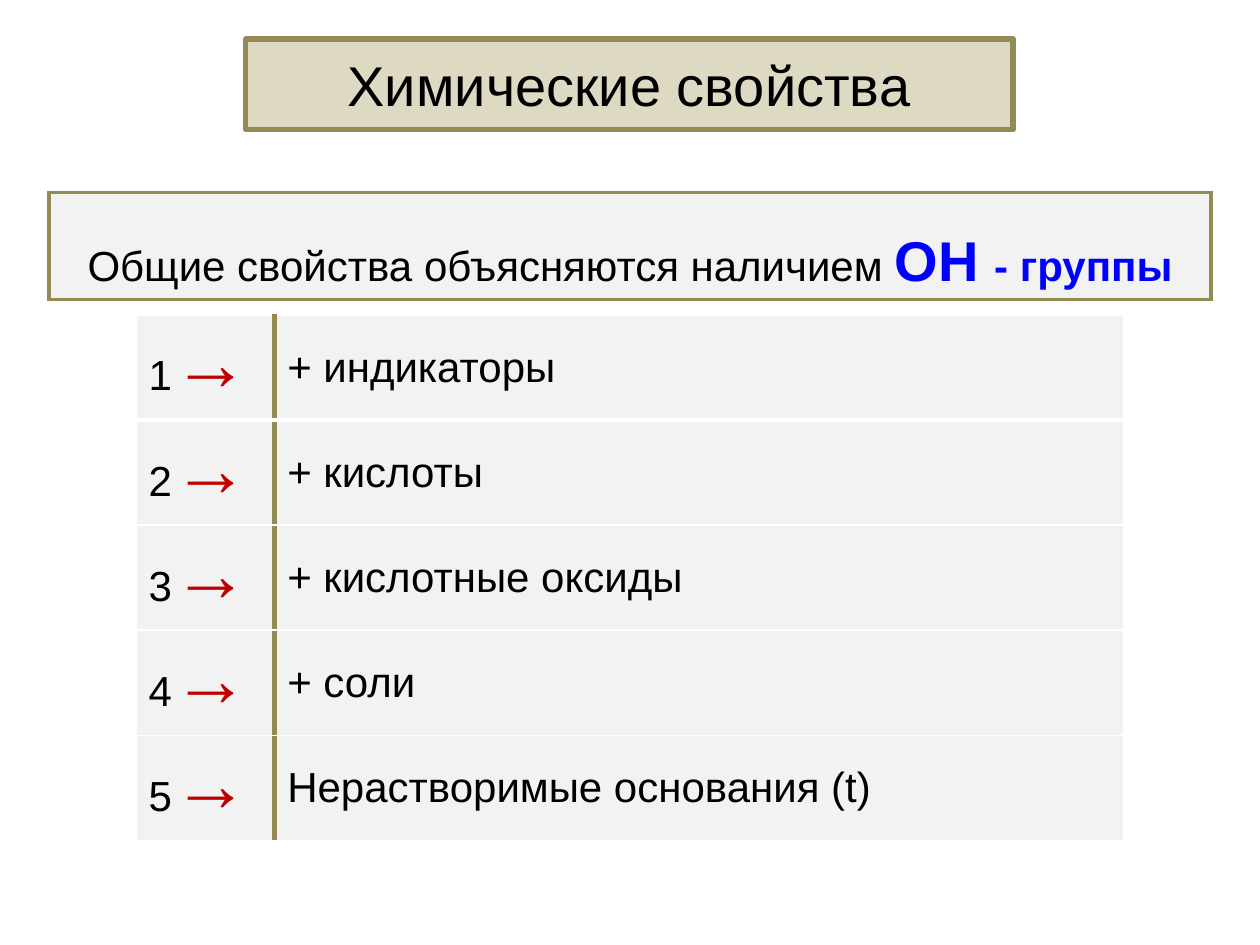
"""Build a slide on the chemical properties explained by the OH group."""
from dataclasses import dataclass

from lxml.etree import SubElement
from pptx import Presentation
from pptx.dml.color import RGBColor
from pptx.enum.shapes import MSO_SHAPE as Preset
from pptx.enum.text import MSO_ANCHOR as Anchor, PP_ALIGN as Align
from pptx.oxml.ns import qn
from pptx.util import Inches, Pt

COLORS = {"sand": "DDD9C3", "olive": "948A54", "pale": "F2F2F2", "white": "FFFFFF",
          "ink": "000000", "blue": "0000FF", "red": "C00000"}
SLIDE_WIDTH, SLIDE_HEIGHT = Inches(10), Inches(7.5)
GRID_COLUMNS, GRID_ROWS = 100, 75
TABLE_FORMAT = {"first_row": False, "horz_banding": False}
REACTIONS = ["+ индикаторы", "+ кислоты", "+ кислотные оксиды", "+ соли",
             "Нерастворимые основания (t)"]


@dataclass(frozen=True)
class Box:
    left: float
    top: float
    width: float
    height: float

    def lengths(self) -> tuple:
        return (columns(self.left), rows(self.top), columns(self.width), rows(self.height))


@dataclass(frozen=True)
class Phrase:
    text: str
    size: int = 24
    color: str = "ink"
    bold: bool = False


@dataclass(frozen=True)
class Edge:
    color: str
    points: float


def columns(count: float) -> int:
    return round(SLIDE_WIDTH * count / GRID_COLUMNS)


def rows(count: float) -> int:
    return round(SLIDE_HEIGHT * count / GRID_ROWS)


def rgb(name: str) -> RGBColor:
    return RGBColor.from_string(COLORS[name])


def apply(target, values: dict) -> None:
    for attribute, value in values.items():
        setattr(target, attribute, value)


def write(frame, phrases: list, **paragraph_format) -> None:
    paragraph = frame.paragraphs[0]
    apply(paragraph, paragraph_format)
    for phrase in phrases:
        run = paragraph.add_run()
        run.text = phrase.text
        apply(run.font, {"name": "Arial", "size": Pt(phrase.size), "bold": phrase.bold})
        run.font.color.rgb = rgb(phrase.color)


def paint(part, color: str) -> None:
    part.fill.solid()
    part.fill.fore_color.rgb = rgb(color)


def draw_heading(slide, box: Box, phrase: Phrase) -> None:
    heading = slide.shapes.add_shape(Preset.ROUNDED_RECTANGLE, *box.lengths())
    heading.adjustments[0] = 0
    heading.shadow.inherit = False
    paint(heading, "sand")
    heading.line.color.rgb = rgb("olive")
    heading.line.width = Pt(3)
    apply(heading.text_frame, {"word_wrap": True, "vertical_anchor": Anchor.MIDDLE})
    write(heading.text_frame, [phrase], alignment=Align.CENTER)


def add_grid(slide, box: Box, row_count: int, widths: list):
    grid = slide.shapes.add_table(row_count, len(widths), *box.lengths()).table
    apply(grid, TABLE_FORMAT)
    for column, width in zip(grid.columns, widths):
        column.width = columns(width)
    return grid


def dress_cell(cell, left: Edge, right: Edge, top: Edge, bottom: Edge) -> None:
    properties = cell._tc.get_or_add_tcPr()
    for side, edge in zip("LRTB", (left, right, top, bottom)):
        border = SubElement(properties, qn(f"a:ln{side}"), w=str(Pt(edge.points)))
        SubElement(SubElement(border, qn("a:solidFill")), qn("a:srgbClr"),
                   val=COLORS[edge.color])
    paint(cell, "pale")


def draw_statement(slide, box: Box, phrases: list) -> None:
    grid = add_grid(slide, box, 1, [box.width])
    grid.rows[0].height = rows(4.1)
    cell = grid.cell(0, 0)
    dress_cell(cell, *[Edge("olive", 2.25)] * 4)
    write(cell.text_frame, phrases, alignment=Align.CENTER, line_spacing=1.5)


def draw_reactions(slide, box: Box, reactions: list) -> None:
    number_width = 11
    grid = add_grid(slide, box, len(reactions), [number_width, box.width - number_width])
    thin, thick, divider = Edge("white", 1), Edge("white", 3), Edge("olive", 3)
    for index, reaction in enumerate(reactions):
        number, description = grid.cell(index, 0), grid.cell(index, 1)
        top = thick if index == 1 else thin
        bottom = thick if index == 0 else thin
        dress_cell(number, thin, divider, top, bottom)
        dress_cell(description, divider, thin, top, bottom)
        write(number.text_frame, [Phrase(str(index + 1)), Phrase("→", 44, "red", True)])
        description.vertical_anchor = Anchor.MIDDLE
        write(description.text_frame, [Phrase(reaction)])


def main() -> None:
    deck = Presentation()
    apply(deck, {"slide_width": SLIDE_WIDTH, "slide_height": SLIDE_HEIGHT})
    slide = deck.slides.add_slide(deck.slide_layouts[6])
    draw_heading(slide, Box(19.5, 3.1, 60.9, 7.2), Phrase("Химические свойства", 32))
    draw_statement(slide, Box(3.9, 15.3, 92.2, 9), [
        Phrase("Общие свойства объясняются наличием "),
        Phrase("ОН ", 32, "blue", True),
        Phrase("- группы", 24, "blue", True)])
    draw_reactions(slide, Box(10.8, 25, 78.4, 41.7), REACTIONS)
    deck.save("out.pptx")


if __name__ == "__main__":
    main()
